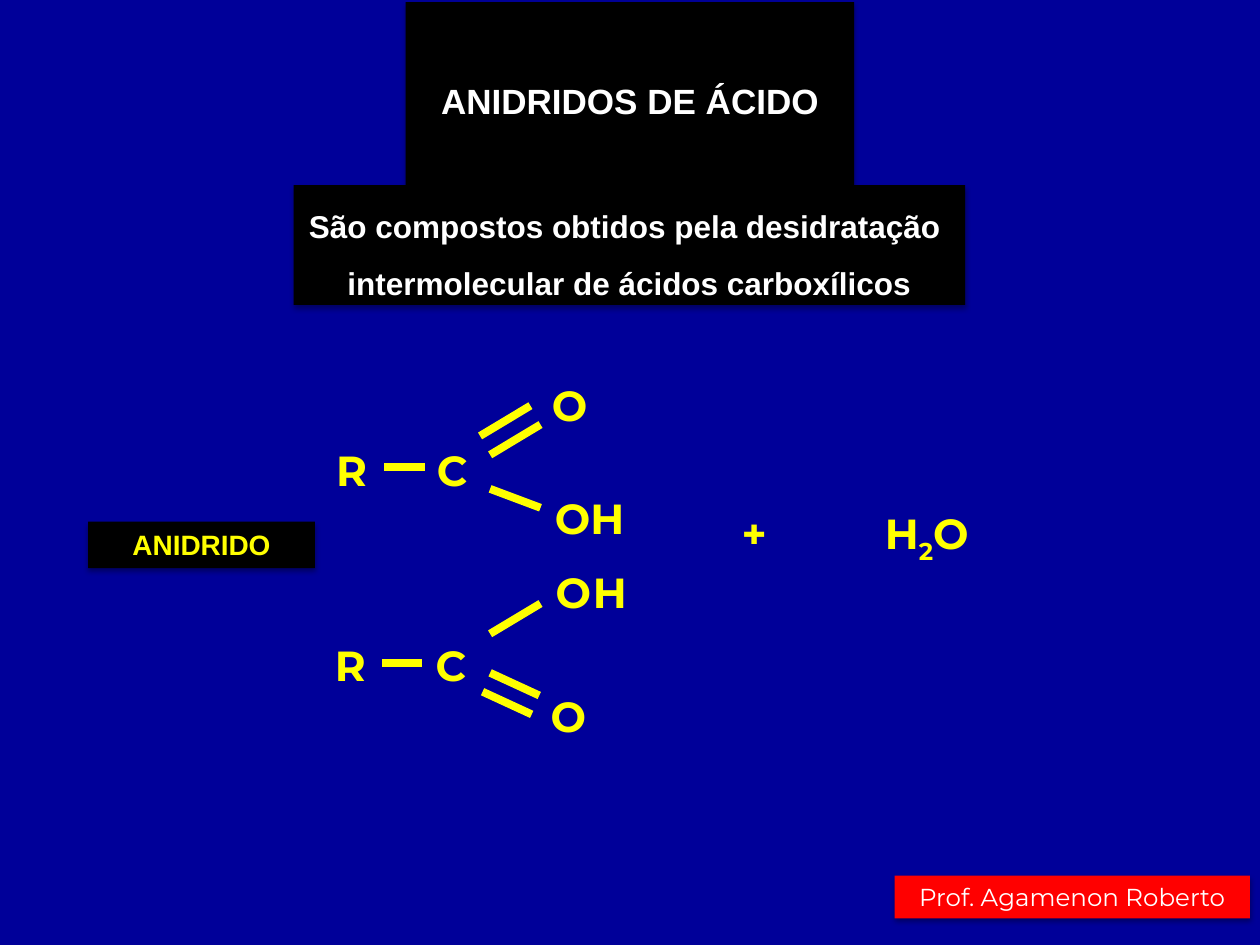
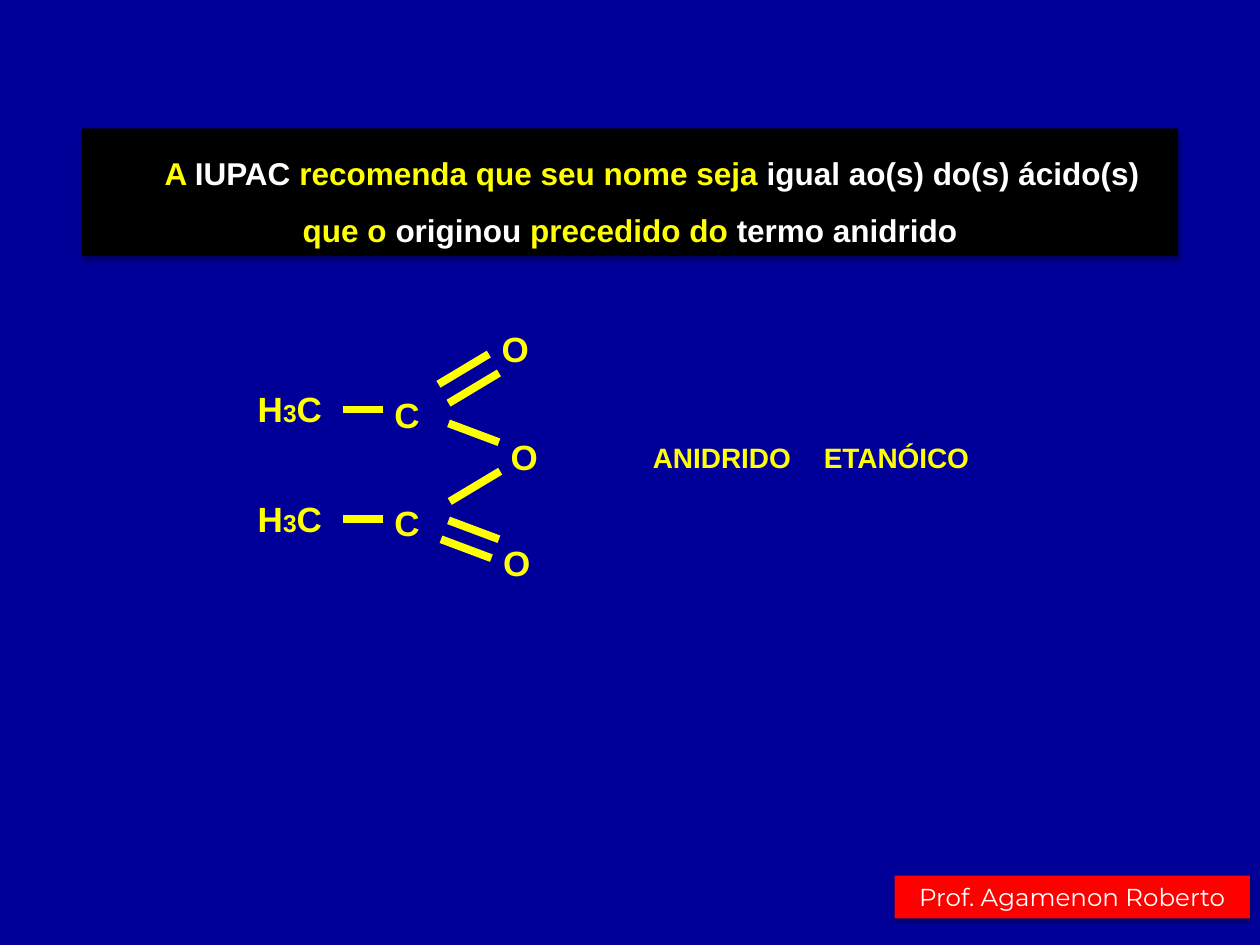
from dataclasses import dataclass

from lxml import etree
from pptx import Presentation
from pptx.dml.color import RGBColor
from pptx.enum.shapes import MSO_CONNECTOR, MSO_SHAPE
from pptx.enum.text import MSO_ANCHOR, MSO_AUTO_SIZE, PP_ALIGN
from pptx.oxml.ns import qn
from pptx.util import Inches, Pt

RECT = MSO_SHAPE.RECTANGLE
STRAIGHT = MSO_CONNECTOR.STRAIGHT
TOP, MIDDLE = MSO_ANCHOR.TOP, MSO_ANCHOR.MIDDLE
GROW = MSO_AUTO_SIZE.SHAPE_TO_FIT_TEXT
CENTER = PP_ALIGN.CENTER
TITLE_ONLY = 5


@dataclass(frozen=True)
class Theme:
    navy: str = "000099"
    black: str = "000000"
    red: str = "FF0000"
    white: str = "FFFFFF"
    yellow: str = "FFFF00"
    text_font: str = "Arial"
    formula_font: str = "Montserrat"
    title: int = 20
    body: int = 18
    label: int = 16
    footer: int = 14
    small: int = 14
    formula: int = 24
    bond: float = 4.5


T = Theme()

# Text styles: font, size, colour, bold
TITLE = dict(font=T.text_font, size=T.title, color=T.white, bold=True)
BODY = dict(TITLE, size=T.body)
LABEL = dict(TITLE, size=T.label, color=T.yellow)
CHAIN = dict(TITLE, color=T.yellow)
FORMULA = dict(CHAIN, font=T.formula_font, size=T.formula)
FOOTER = dict(font=T.formula_font, size=T.footer, color=T.white, bold=False)

# Paragraphs are lists of runs: (text, changes to the style)
HI = dict(color=T.yellow)
FOOTER_TEXT = [[("Prof. Agamenon Roberto", {})]]
HEADING = [[("ANIDRIDOS DE ÁCIDO", {})]]
DEFINITION = [[("São compostos obtidos pela desidratação ", {})],
              [("intermolecular de ácidos carboxílicos", {})]]
NAMING_RULE = [[
    ("A ", HI), ("IUPAC", {}), (" recomenda que seu nome seja ", HI),
    ("igual ao(s) do(s) ácido(s)", {}), (" que o ", HI), ("originou", {}),
    (" precedido do ", HI), ("termo anidrido", {}),
]]
WATER = [("H", {}), ("2", dict(baseline=-25000)), ("O", {})]
METHYL = [("H", {}), ("3", dict(size=T.small)), ("C", {})]

# Bond directions, and the shift of the second line of a double bond
FLAT, UP, DOWN, STEEP = (0.32, 0), (0.4, -0.24), (0.4, 0.15), (0.39, 0.18)
SECOND = {UP: (-0.08, -0.15), DOWN: (-0.06, 0.15), STEEP: (-0.06, 0.15)}

# Atoms: (text, left, top, width); bonds: (x, y, direction, order)
UPPER_ACID = dict(
    atoms=[("R", 2.56, 3.48, 0.46), ("C", 3.36, 3.48, 0.46),
           ("O", 4.28, 2.96, 0.48), ("OH", 4.3, 3.86, 0.76)],
    bonds=[(3.05, 3.71, FLAT, 1), (3.89, 3.61, UP, 2), (3.89, 3.88, DOWN, 1)])
LOWER_ACID = dict(
    atoms=[("R", 2.55, 5.03, 0.46), ("C", 3.35, 5.03, 0.46),
           ("O", 4.27, 5.43, 0.48), ("O", 4.31, 4.45, 0.48),
           ("H", 4.6, 4.45, 0.48)],
    bonds=[(3.03, 5.26, FLAT, 1), (3.89, 5.03, UP, 1), (3.89, 5.34, STEEP, 2)])
ANHYDRIDE = dict(
    atoms=[(METHYL, 1.94, 3.03, 0.72), ("C", 3.03, 3.07, 0.4),
           (METHYL, 1.94, 3.9, 0.72), ("C", 3.03, 3.93, 0.4),
           ("O", 3.88, 2.55, 0.42), ("O", 3.95, 3.41, 0.42),
           ("O", 3.89, 4.25, 0.42)],
    bonds=[(2.72, 3.25, FLAT, 1), (2.72, 4.12, FLAT, 1),
           (3.56, 3.2, UP, 2), (3.56, 3.36, DOWN, 1),
           (3.57, 3.98, UP, 1), (3.56, 4.13, DOWN, 2)])


def rgb(value):
    return RGBColor.from_string(value)


def write(sp, paragraphs, style, wrap=False, anchor=TOP, spacing=None):
    tf = sp.text_frame
    tf.word_wrap, tf.auto_size, tf.vertical_anchor = wrap, GROW, anchor
    for i, runs in enumerate(paragraphs):
        p = tf.add_paragraph() if i else tf.paragraphs[0]
        p.alignment = CENTER
        if spacing:
            p.line_spacing = spacing
        for text, changes in runs:
            look = {**style, **changes}
            r = p.add_run()
            r.text = text
            f = r.font
            f.name, f.size, f.bold = look["font"], Pt(look["size"]), look["bold"]
            f.color.rgb = rgb(look["color"])
            if "baseline" in look:
                r._r.get_or_add_rPr().set("baseline", str(look["baseline"]))


def style_band(sp, fill):
    """Flat fill, no outline and a soft shadow below."""
    sp.fill.solid()
    sp.fill.fore_color.rgb = rgb(fill)
    sp.line.fill.background()
    sp.shadow.inherit = False
    effects = sp._element.spPr.find(qn("a:effectLst"))
    shadow = etree.SubElement(effects, qn("a:outerShdw"), blurRad=str(Pt(3.1)),
                              dist=str(Pt(1.8)), dir="5400000", rotWithShape="0")
    color = etree.SubElement(shadow, qn("a:srgbClr"), val=T.black)
    etree.SubElement(color, qn("a:alpha"), val="35000")


def add_band(s, box, fill, paragraphs, style, **layout):
    sp = s.shapes.add_shape(RECT, *map(Inches, box))
    style_band(sp, fill)
    write(sp, paragraphs, style, **layout)


def set_title(s, box, paragraphs, style, **layout):
    sp = s.shapes.title
    sp.left, sp.top, sp.width, sp.height = map(Inches, box)
    style_band(sp, T.black)
    write(sp, paragraphs, style, wrap=True, anchor=MIDDLE, **layout)
    return sp


def add_label(shapes, content, box, style):
    runs = [(content, {})] if isinstance(content, str) else content
    write(shapes.add_textbox(*map(Inches, box)), [runs], style)


def add_bond(shapes, x, y, direction):
    dx, dy = direction
    line = shapes.add_connector(STRAIGHT, *map(Inches, (x, y, x + dx, y + dy)))
    line.line.color.rgb = rgb(T.yellow)
    line.line.width = Pt(T.bond)
    etree.SubElement(line._element.spPr, qn("a:effectLst"))


def add_molecule(s, molecule, style, height):
    shapes = s.shapes.add_group_shape().shapes
    for content, left, top, width in molecule["atoms"]:
        add_label(shapes, content, (left, top, width, height), style)
    for x, y, direction, order in molecule["bonds"]:
        add_bond(shapes, x, y, direction)
        if order == 2:
            dx, dy = SECOND[direction]
            add_bond(shapes, x + dx, y + dy, direction)


def add_slide(prs):
    return prs.slides.add_slide(prs.slide_layouts[TITLE_ONLY])


def add_footer(s):
    add_band(s, (7.1, 6.95, 2.82, 0.34), T.red, FOOTER_TEXT, FOOTER)


def build_definition(prs):
    s = add_slide(prs)
    set_title(s, (3.22, 0.58, 3.56, 0.44), HEADING, TITLE)
    add_band(s, (2.33, 1.47, 5.33, 0.95), T.black, DEFINITION, BODY,
             anchor=MIDDLE, spacing=1.5)
    for acid in (UPPER_ACID, LOWER_ACID):
        add_molecule(s, acid, FORMULA, 0.5)
    add_label(s.shapes, "+", (5.77, 3.98, 0.43, 0.5), FORMULA)
    add_label(s.shapes, WATER, (6.9, 3.98, 0.91, 0.5), FORMULA)
    add_band(s, (0.7, 4.14, 1.8, 0.37), T.black, [[("ANIDRIDO", {})]], LABEL,
             wrap=True)
    add_footer(s)


def build_naming(prs):
    s = add_slide(prs)
    title = set_title(s, (0.65, 1.02, 8.7, 1.01), NAMING_RULE, BODY, spacing=1.5)
    # First-line indent
    pPr = title.text_frame.paragraphs[0]._p.get_or_add_pPr()
    pPr.set("marL", "0")
    pPr.set("indent", str(Inches(0.35)))
    add_molecule(s, ANHYDRIDE, CHAIN, 0.44)
    add_label(s.shapes, "ANIDRIDO", (5.05, 3.45, 1.36, 0.37), LABEL)
    add_label(s.shapes, "ETANÓICO", (6.41, 3.45, 1.41, 0.37), LABEL)
    add_footer(s)


def main():
    prs = Presentation()
    prs.slide_width, prs.slide_height = Inches(10), Inches(7.5)
    background = prs.slide_master.background.fill
    background.solid()
    background.fore_color.rgb = rgb(T.navy)
    build_definition(prs)
    build_naming(prs)
    prs.save("out.pptx")


if __name__ == "__main__":
    main()
